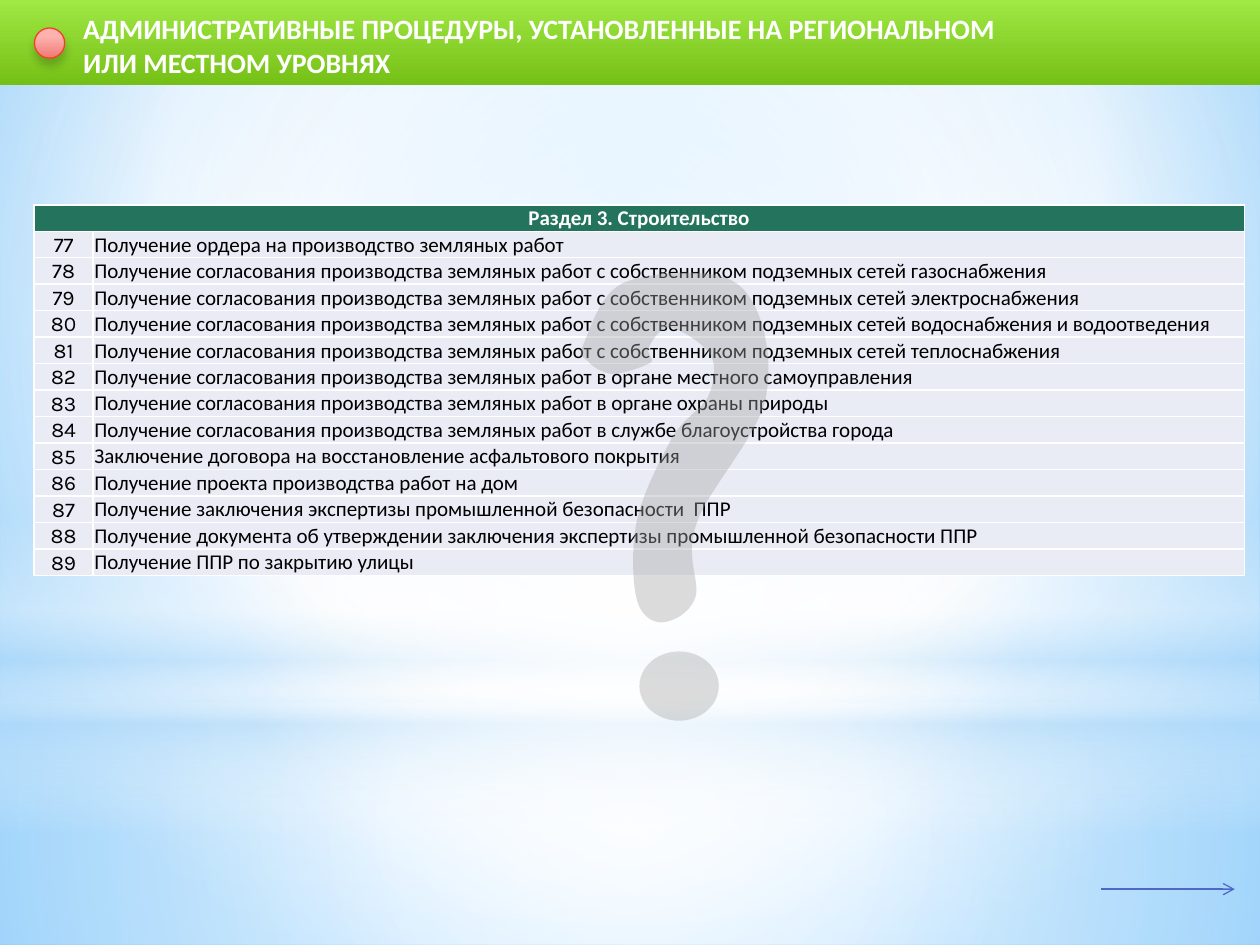
import pptx
import pptx.dml.color
import pptx.enum.shapes
import pptx.enum.text
import pptx.oxml
import pptx.oxml.ns
import pptx.util

Pt = pptx.util.Pt
qn = pptx.oxml.ns.qn
MSO = pptx.enum.shapes.MSO_SHAPE
ALIGN = pptx.enum.text.PP_ALIGN
ANCHOR = pptx.enum.text.MSO_ANCHOR
NS = 'xmlns:a="http://schemas.openxmlformats.org/drawingml/2006/main"'

COLORS = {
    "white": "FFFFFF", "black": "000000", "sky": "9ED5FF", "blue": "5BB9FF",
    "haze": "B4DCFA", "lime": "A0E844", "green": "75C016", "header": "23735D",
    "row": "E9EBF5", "gray": "A6A6A6", "arrow": "4E67C8",
    "pink": "FDB2AF", "coral": "F07873", "red": "F14124",
}
CENTER = (50, 50, 50, 50)
HORIZON = 401.71
DIG = "Получение согласования производства земляных работ "
OWNER = DIG + "с собственником подземных сетей "
PROCEDURES = [
    "Получение ордера на производство земляных работ",
    OWNER + "газоснабжения",
    OWNER + "электроснабжения",
    OWNER + "водоснабжения и водоотведения",
    OWNER + "теплоснабжения",
    DIG + "в органе местного самоуправления",
    DIG + "в органе охраны природы",
    DIG + "в службе благоустройства города",
    "Заключение договора на восстановление асфальтового покрытия",
    "Получение проекта производства работ на дом",
    "Получение заключения экспертизы промышленной безопасности  ППР",
    "Получение документа об утверждении заключения экспертизы промышленной безопасности ППР",
    "Получение ППР по закрытию улицы",
]
FIRST_NUMBER = 77
ROW_H = 15.12

# Start point, then three points for each cubic curve
HOOK_BOX = (331.92, 155.52, 107.28, 200.16)
HOOK = [
    (333.4, 196.6),
    (337, 189.4), (342.7, 167), (357.1, 161.3),
    (372.2, 155.5), (409, 151.9), (421.9, 162.7),
    (435.6, 173.5), (442.1, 203), (437.8, 226.1),
    (434.2, 248.4), (404.6, 279.4), (398.2, 298.8),
    (391, 318.2), (400.3, 331.9), (397.4, 341.3),
    (393.8, 351.4), (383, 355.7), (378, 355.7),
    (372.2, 355.7), (365.8, 351.4), (363.6, 341.3),
    (361.4, 331.9), (360.7, 311), (364.3, 295.9),
    (367.9, 280.8), (377.3, 262.8), (383.8, 250.6),
    (390.2, 239), (400.3, 234.7), (404.6, 226.8),
    (408.2, 218.9), (409.7, 209.5), (406.1, 203),
    (402.5, 196.6), (388.8, 187.9), (383, 187.2),
    (377.3, 186.5), (372.2, 195.1), (370.8, 198.7),
    (368.6, 201.6), (375.1, 205.2), (371.5, 207.4),
    (367.9, 209.5), (355.7, 213.8), (349.9, 213.8),
    (344.2, 213.1), (338.4, 209.5), (336.2, 206.6),
    (333.4, 203.8), (329.8, 204.5), (333.4, 196.6),
]


def rgb(name):
    return pptx.dml.color.RGBColor.from_string(COLORS[name])


def add_xml(parent, xml):
    head, rest = xml.split(">", 1)
    slash = "/" if head.endswith("/") else ""
    parent.append(pptx.oxml.parse_xml(f"{head.rstrip('/')} {NS}{slash}>{rest}"))


def set_gradient(owner, fill, stops, focus=None):
    """Stops are (position, colour, opacity); without a focus it runs downwards."""
    fill.gradient()
    grad = next(owner.iter(qn("a:gradFill")))
    grad.clear()
    gs = "".join(
        f'<a:gs pos="{pos * 1000}"><a:srgbClr val="{COLORS[c]}">'
        f'<a:alpha val="{alpha * 1000}"/></a:srgbClr></a:gs>'
        for pos, c, alpha in stops)
    add_xml(grad, f"<a:gsLst>{gs}</a:gsLst>")
    if focus:
        l, t, r, b = (v * 1000 for v in focus)
        add_xml(grad, f'<a:path path="circle"><a:fillToRect l="{l}" t="{t}" r="{r}" b="{b}"/></a:path>')
    else:
        add_xml(grad, '<a:lin ang="5400000" scaled="0"/>')


def add_gradient_shape(s, kind, box, stops, focus=None):
    sp = s.shapes.add_shape(kind, *map(Pt, box))
    sp.shadow.inherit = False
    sp.line.fill.background()
    set_gradient(sp._element, sp.fill, stops, focus)
    return sp


def add_run(p, text, size, color, font="Calibri", bold=False):
    r = p.add_run()
    r.text = text
    r.font.size, r.font.name, r.font.bold = Pt(size), font, bold
    r.font.color.rgb = rgb(color)


def add_background(s):
    set_gradient(s._element, s.background.fill,
                 [(0, "sky", 100), (60, "white", 100), (100, "blue", 100)], (20, 10, 20, 60))
    add_gradient_shape(s, MSO.RECTANGLE, (0, HORIZON, 720, 540 - HORIZON),
                       [(0, "white", 91), (37, "white", 76), (100, "haze", 79)], CENTER)
    add_gradient_shape(s, MSO.RECTANGLE, (0, 0, 720, HORIZON),
                       [(0, "white", 89), (48, "white", 62), (100, "haze", 79)], CENTER)
    add_gradient_shape(s, MSO.RECTANGLE, (0, 296.64, 720, 180),
                       [(0, "white", 0), (29, "white", 30), (45, "haze", 40),
                        (55, "white", 26), (65, "haze", 60), (100, "white", 0)])
    add_gradient_shape(s, MSO.OVAL, (0, 126, 720, HORIZON),
                       [(0, "white", 100), (56, "white", 0)], CENTER)


def style_cell(cell, fill):
    cell.margin_left = cell.margin_right = Pt(0.72)
    cell.margin_top, cell.margin_bottom = Pt(0.5), 0
    tc_pr = cell._tc.get_or_add_tcPr()
    for side in ("lnL", "lnR", "lnT", "lnB"):
        add_xml(tc_pr, f'<a:{side} w="12700"><a:solidFill><a:srgbClr val="{COLORS["white"]}"/>'
                       f'</a:solidFill></a:{side}>')
    cell.fill.solid()
    cell.fill.fore_color.rgb = rgb(fill)


def add_procedures(s):
    rows = len(PROCEDURES) + 1
    table = s.shapes.add_table(rows, 2, Pt(19.44), Pt(117), Pt(691.6), Pt(rows * ROW_H)).table
    table.columns[0].width, table.columns[1].width = Pt(33.84), Pt(657.76)
    for i, row in enumerate(table.rows):
        row.height = Pt(ROW_H)
        for cell in row.cells:
            style_cell(cell, "row" if i else "header")
    table.cell(0, 0).merge(table.cell(0, 1))
    p = table.cell(0, 0).text_frame.paragraphs[0]
    p.alignment = ALIGN.CENTER
    add_run(p, "Раздел 3. Строительство", 12, "white", bold=True)
    for i, name in enumerate(PROCEDURES, 1):
        number = table.cell(i, 0)
        number.vertical_anchor = ANCHOR.BOTTOM
        p = number.text_frame.paragraphs[0]
        p.alignment = ALIGN.CENTER
        add_run(p, str(FIRST_NUMBER + i - 1), 12, "black", "Karla")
        add_run(table.cell(i, 1).text_frame.paragraphs[0], name, 12, "black")


def add_curve(shapes, points, box):
    """Freeform through every third point, its straight sides turned into cubic curves."""
    fb = shapes.build_freeform(*map(Pt, points[0]))
    fb.add_line_segments([(Pt(x), Pt(y)) for x, y in points[3::3]], close=True)
    sp = fb.convert_to_shape()
    sp.left, sp.top, sp.width, sp.height = map(Pt, box)
    outline = next(sp._element.iter(qn("a:pathLst")))[0]
    outline.clear()
    outline.set("w", str(sp.width))
    outline.set("h", str(sp.height))
    pts = [f'<a:pt x="{Pt(x) - sp.left}" y="{Pt(y) - sp.top}"/>' for x, y in points]
    add_xml(outline, f"<a:moveTo>{pts[0]}</a:moveTo>")
    for i in range(1, len(pts), 3):
        add_xml(outline, f"<a:cubicBezTo>{''.join(pts[i:i + 3])}</a:cubicBezTo>")
    add_xml(outline, "<a:close/>")
    return sp


def add_question_mark(s):
    group = s.shapes.add_group_shape()
    hook = add_curve(group.shapes, HOOK, HOOK_BOX)
    dot = group.shapes.add_shape(MSO.OVAL, Pt(365.4), Pt(372.24), Pt(45.36), Pt(39.6))
    for sp in (hook, dot):
        sp.shadow.inherit = False
        sp.line.fill.background()
        sp.fill.solid()
        sp.fill.fore_color.rgb = rgb("gray")
        add_xml(next(sp._element.spPr.iter(qn("a:srgbClr"))), '<a:alpha val="39000"/>')


def add_arrow(s):
    c = s.shapes.add_connector(pptx.enum.shapes.MSO_CONNECTOR.STRAIGHT,
                               Pt(629.28), Pt(508.1), Pt(705.6), Pt(508.1))
    c.line.color.rgb, c.line.width = rgb("arrow"), Pt(0.75)
    add_xml(c.line._get_or_add_ln(), '<a:tailEnd type="arrow"/>')
    add_xml(c._element.spPr, "<a:effectLst/>")


def add_title(s):
    add_gradient_shape(s, MSO.RECTANGLE, (0, 0, 720, 48.6),
                       [(0, "lime", 100), (100, "green", 100)])
    tf = s.shapes.add_textbox(Pt(40.5), Pt(3.3), Pt(557.28), Pt(46.08)).text_frame
    tf.word_wrap = True
    tf.auto_size = pptx.enum.text.MSO_AUTO_SIZE.SHAPE_TO_FIT_TEXT
    add_run(tf.paragraphs[0], "АДМИНИСТРАТИВНЫЕ ПРОЦЕДУРЫ, УСТАНОВЛЕННЫЕ НА РЕГИОНАЛЬНОМ "
            "ИЛИ МЕСТНОМ УРОВНЯХ", 16, "white", bold=True)
    bullet = add_gradient_shape(s, MSO.OVAL, (19.7, 16, 17.28, 17.28),
                                [(28, "pink", 100), (100, "coral", 100)])
    bullet.line.color.rgb, bullet.line.width = rgb("red"), Pt(0.75)
    add_xml(bullet._element.spPr.find(qn("a:effectLst")),
            '<a:outerShdw blurRad="63500" dist="50800" dir="5400000" rotWithShape="0">'
            f'<a:srgbClr val="{COLORS["black"]}"><a:alpha val="20000"/></a:srgbClr></a:outerShdw>')


def main():
    prs = pptx.Presentation()
    prs.slide_width, prs.slide_height = Pt(720), Pt(540)
    s = prs.slides.add_slide(prs.slide_layouts[6])
    add_background(s)
    add_procedures(s)
    add_question_mark(s)
    add_arrow(s)
    add_title(s)
    prs.save("out.pptx")


if __name__ == "__main__":
    main()
